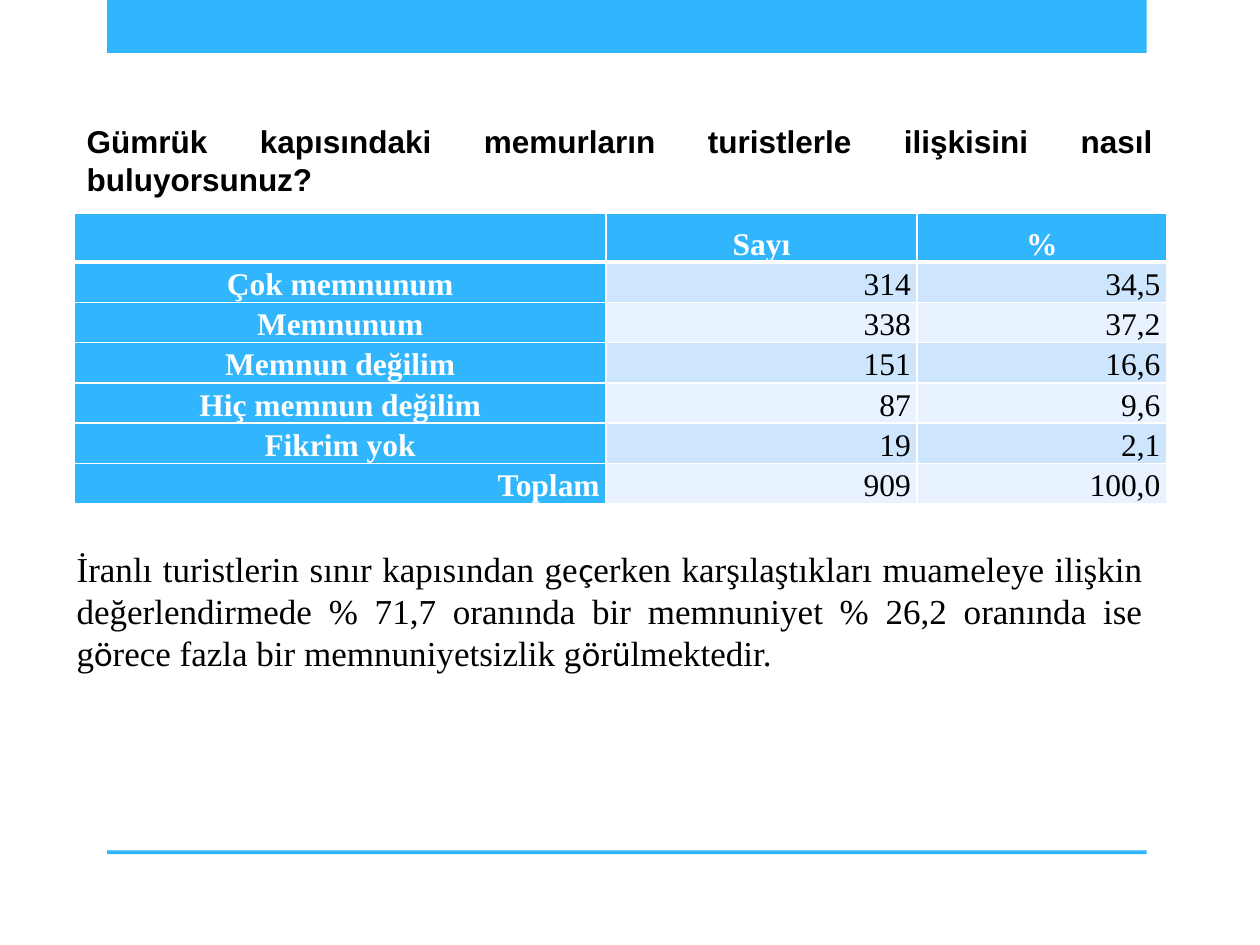
from dataclasses import dataclass
from itertools import groupby

from lxml.etree import SubElement
from pptx import Presentation
from pptx.dml.color import RGBColor
from pptx.enum.shapes import MSO_SHAPE
from pptx.enum.text import MSO_ANCHOR, MSO_AUTO_SIZE, PP_ALIGN
from pptx.oxml.ns import qn
from pptx.util import Inches, Pt


@dataclass(frozen=True)
class Theme:
    blue: str = "31B6FD"
    odd: str = "CEE5FE"
    even: str = "E8F3FF"
    white: str = "FFFFFF"
    black: str = "000000"
    serif: str = "Times New Roman"
    sans: str = "Arial"
    mixed: str = "Calibri"
    small: int = 18
    large: int = 20


@dataclass(frozen=True)
class Box:
    """Place and size as shares of the slide."""
    left: float
    top: float
    width: float
    height: float

    def emu(self) -> tuple:
        return (Inches(self.left * WIDE), Inches(self.top * HIGH),
                Inches(self.width * WIDE), Inches(self.height * HIGH))


@dataclass(frozen=True)
class Row:
    label: str
    count: str
    share: str
    align: PP_ALIGN = PP_ALIGN.CENTER


WIDE, HIGH = 10, 7.5
THEME = Theme()
COLS = (4.22, 2.47, 1.98)
HEAD, LINE = 0.39, 0.32
ROWS = [
    Row("", "Sayı", "%"),
    Row("Çok memnunum", "314", "34,5"),
    Row("Memnunum", "338", "37,2"),
    Row("Memnun değilim", "151", "16,6"),
    Row("Hiç memnun değilim", "87", "9,6"),
    Row("Fikrim yok", "19", "2,1"),
    Row("Toplam", "909", "100,0", PP_ALIGN.RIGHT),
]
TITLE = "Gümrük kapısındaki memurların turistlerle ilişkisini nasıl buluyorsunuz?"
BODY = ("İranlı turistlerin sınır kapısından geçerken karşılaştıkları muameleye "
        "ilişkin değerlendirmede % 71,7 oranında bir memnuniyet % 26,2 oranında "
        "ise görece fazla bir memnuniyetsizlik görülmektedir.")


def write(frame, text: str, *, font: str = THEME.serif, size: int = THEME.small,
          color: str = THEME.black, bold: bool = False,
          align: PP_ALIGN = PP_ALIGN.JUSTIFY, space: float | None = None,
          swap: str = "") -> None:
    """Fill a text frame; letters in swap take the mixed font."""
    para = frame.paragraphs[0]
    para.alignment = align
    if space:
        para.line_spacing = space
    for other, part in groupby(text, lambda char: char in swap):
        run = para.add_run()
        run.text = "".join(part)
        run.font.name = THEME.mixed if other else font
        run.font.size = Pt(size)
        run.font.bold = bold
        run.font.color.rgb = RGBColor.from_string(color)


def bar(slide, box: Box) -> None:
    shape = slide.shapes.add_shape(MSO_SHAPE.RECTANGLE, *box.emu())
    shape.shadow.inherit = False
    shape.fill.solid()
    shape.fill.fore_color.rgb = RGBColor.from_string(THEME.blue)
    shape.line.fill.background()


def note(slide, box: Box, text: str, anchor: MSO_ANCHOR, **style) -> None:
    frame = slide.shapes.add_textbox(*box.emu()).text_frame
    frame.word_wrap = True
    frame.auto_size = MSO_AUTO_SIZE.SHAPE_TO_FIT_TEXT
    frame.vertical_anchor = anchor
    write(frame, text, **style)


def edge(cell, top: int, base: int) -> None:
    """Draw white borders; they must come before the fill."""
    props = cell._tc.get_or_add_tcPr()
    sides = (("lnL", 1), ("lnR", 1), ("lnT", top), ("lnB", base))
    for spot, (side, width) in enumerate(sides):
        line = SubElement(props, qn(f"a:{side}"), w=str(Pt(width)))
        fill = SubElement(line, qn("a:solidFill"))
        SubElement(fill, qn("a:srgbClr"), val=THEME.white)
        props.insert(spot, line)


def grid(slide, box: Box) -> None:
    table = slide.shapes.add_table(len(ROWS), len(COLS), *box.emu()).table
    for col, width in zip(table.columns, COLS):
        col.width = Inches(width)
    for i, row in enumerate(ROWS):
        head = i == 0
        table.rows[i].height = Inches(HEAD if head else LINE)
        for j, text in enumerate((row.label, row.count, row.share)):
            cell = table.cell(i, j)
            strong = head or j == 0
            cell.margin_left = cell.margin_right = Inches(0.05)
            cell.margin_top = cell.margin_bottom = 0
            cell.vertical_anchor = MSO_ANCHOR.BOTTOM if head else MSO_ANCHOR.TOP
            tint = THEME.blue if strong else THEME.odd if i % 2 else THEME.even
            cell.fill.solid()
            cell.fill.fore_color.rgb = RGBColor.from_string(tint)
            edge(cell, top=3 if i == 1 else 1, base=3 if head else 1)
            write(cell.text_frame, text, bold=strong, space=1.15,
                  color=THEME.white if strong else THEME.black,
                  align=row.align if strong else PP_ALIGN.RIGHT)


def main() -> None:
    deck = Presentation()
    deck.slide_width, deck.slide_height = Inches(WIDE), Inches(HIGH)
    slide = deck.slides.add_slide(deck.slide_layouts[6])

    # Top band and bottom rule
    bar(slide, Box(0.085, 0, 0.825, 0.42 / HIGH))
    bar(slide, Box(0.085, 0.9, 0.825, 0.03 / HIGH))

    # Survey results
    tall = HEAD + LINE * (len(ROWS) - 1)
    grid(slide, Box(0.059, 1.69 / HIGH, sum(COLS) / WIDE, tall / HIGH))

    # Comment and question
    note(slide, Box(0.051, 4.29 / HIGH, 0.866, 1.11 / HIGH), BODY,
         MSO_ANCHOR.MIDDLE, size=THEME.large, swap="çöü")
    note(slide, Box(0.059, 0.92 / HIGH, 0.866, 0.71 / HIGH), TITLE,
         MSO_ANCHOR.TOP, font=THEME.sans, bold=True)

    deck.save("out.pptx")


if __name__ == "__main__":
    main()
